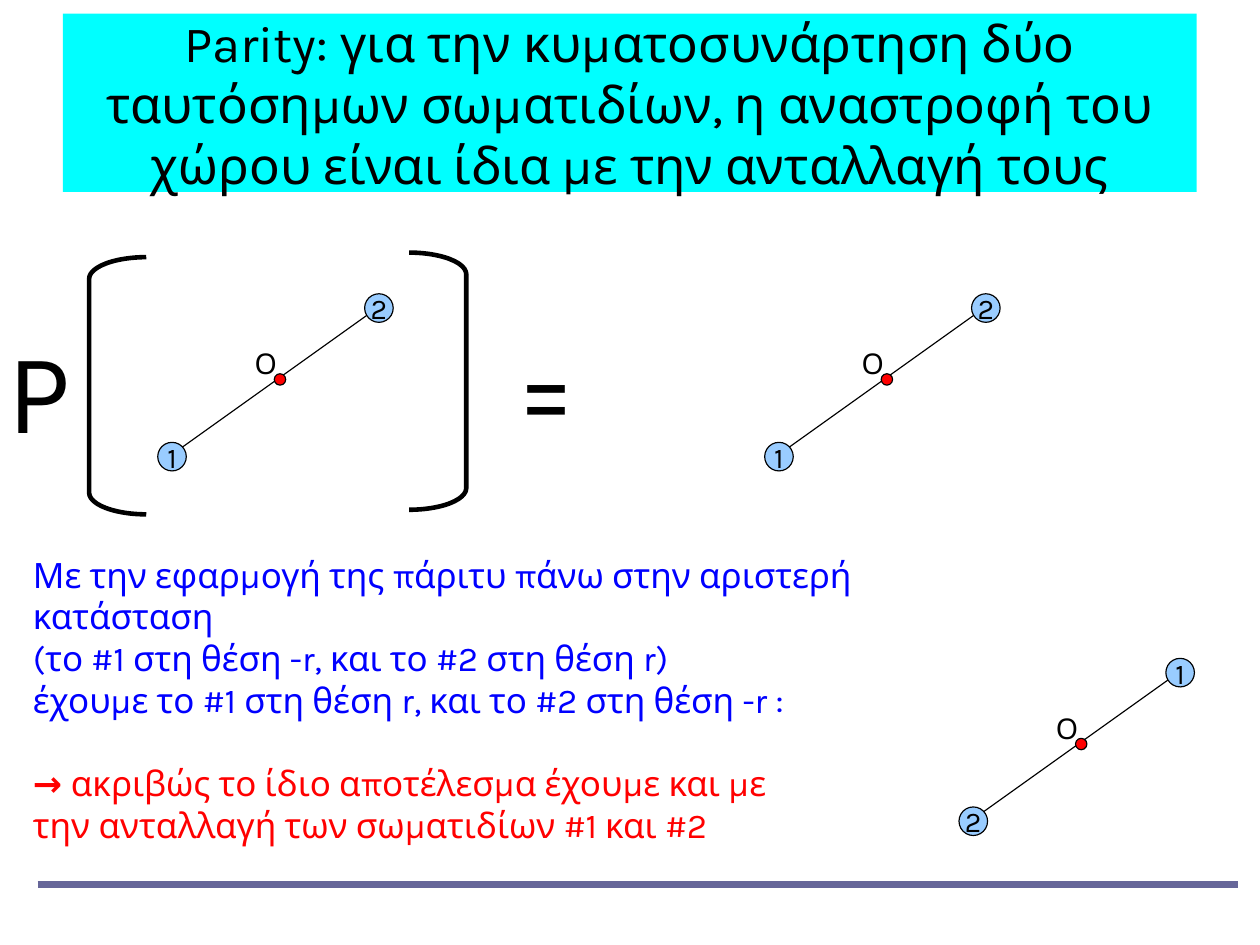
from lxml.etree import SubElement
from pptx import Presentation
from pptx.dml.color import RGBColor
from pptx.enum.shapes import MSO_CONNECTOR as CONN, MSO_SHAPE as SHAPE
from pptx.enum.text import MSO_ANCHOR as ANCHOR, PP_ALIGN as ALIGN
from pptx.oxml.ns import qn
from pptx.util import Inches, Pt

FONT = "Karla"
BLACK, BLUE, RED = "000000", "0000FF", "FF0000"
CM_PER_INCH = 2.54


def color(hex_value):
    return RGBColor.from_string(hex_value)


def add_run(p, text, size, text_color=BLACK, bold=False):
    r = p.add_run()
    r.text = text
    r.font.name = FONT
    r.font.size = Pt(size)
    r.font.bold = bold
    r.font.color.rgb = color(text_color)


def add_line(s, x1, y1, x2, y2, line_color, width):
    line = s.shapes.add_connector(
        CONN.STRAIGHT, Inches(x1), Inches(y1), Inches(x2), Inches(y2))
    line.line.color.rgb = color(line_color)
    line.line.width = Pt(width)
    SubElement(line._element.spPr, qn("a:effectLst"))


def add_figure(s, kind, x, y, w, h, fill=None, line_width=None):
    sp = s.shapes.add_shape(kind, Inches(x), Inches(y), Inches(w), Inches(h))
    sp.shadow.inherit = False
    if fill:
        sp.fill.solid()
        sp.fill.fore_color.rgb = color(fill)
    else:
        sp.fill.background()
    if line_width:
        sp.line.color.rgb = color(BLACK)
        sp.line.width = Pt(line_width)
    else:
        sp.line.fill.background()
    return sp


def add_text_box(s, x, y, w, h):
    tf = s.shapes.add_textbox(
        Inches(x), Inches(y), Inches(w), Inches(h)).text_frame
    tf.word_wrap = True
    return tf


def add_label(s, text, x, y, w, h, size):
    add_run(add_text_box(s, x, y, w, h).paragraphs[0], text, size)


def add_title(s, text):
    sp = add_figure(s, SHAPE.RECTANGLE, 0.55, 0.12, 9.92, 1.56, "00FFFF")
    tf = sp.text_frame
    tf.word_wrap = True
    tf.vertical_anchor = ANCHOR.MIDDLE
    tf.margin_left = tf.margin_right = tf.margin_top = tf.margin_bottom = 0
    p = tf.paragraphs[0]
    p.alignment = ALIGN.CENTER
    add_run(p, text, 32)


def add_particle(s, text, x, y):
    sp = add_figure(s, SHAPE.OVAL, x, y, 0.25, 0.25, "99CCFF", 0.75)
    tf = sp.text_frame
    tf.word_wrap = False
    tf.vertical_anchor = ANCHOR.MIDDLE
    p = tf.paragraphs[0]
    p.alignment = ALIGN.CENTER
    add_run(p, text, 18)


def add_particle_pair(s, x, y, lower, upper):
    add_line(s, x + 0.12, y + 1.41, x + 1.87, y + 0.16, BLACK, 0.75)
    add_particle(s, lower, x, y + 1.3)
    add_particle(s, upper, x + 1.81, y)
    add_figure(s, SHAPE.OVAL, x + 1.02, y + 0.7, 0.1, 0.1, RED, 0.75)
    add_label(s, "Ο", x + 0.75, y + 0.41, 0.39, 0.39, 18)


def add_bracket(s, kind, x, y):
    sp = add_figure(s, kind, x, y, 0.5, 2.25, line_width=2.89)
    sp.adjustments[0] = 0.38


def add_explanation(s):
    tf = add_text_box(s, 0.19, 4.79, 7.75, 2.6)
    statements = [
        "Με την εφαρμογή της πάριτυ πάνω στην αριστερή κατάσταση",
        "(το #1 στη θέση -r, και το #2 στη θέση r)",
        "έχουμε το #1 στη θέση r, και το #2 στη θέση -r :",
    ]
    p = tf.paragraphs[0]
    for text in statements:
        add_run(p, text, 22, BLUE)
        p = tf.add_paragraph()
    p.space_before = Pt(26)
    add_run(p, "→ ", 22, RED, True)
    add_run(p, "ακριβώς το ίδιο αποτέλεσμα έχουμε και με", 22, RED)
    p.add_line_break()
    add_run(p, "την ανταλλαγή των σωματιδίων #1 και #2", 22, RED)


def main():
    prs = Presentation()
    prs.slide_width = Inches(28 / CM_PER_INCH)
    prs.slide_height = Inches(21 / CM_PER_INCH)
    s = prs.slides.add_slide(prs.slide_layouts[6])
    add_line(s, 0.33, 7.74, 10.83, 7.74, "666699", 4.31)
    add_title(s, "Parity: για την κυματοσυνάρτηση δύο ταυτόσημων σωματιδίων, "
                 "η αναστροφή του χώρου είναι ίδια με την ανταλλαγή τους")
    add_particle_pair(s, 1.38, 2.57, "1", "2")
    add_label(s, "P", -0.03, 2.74, 0.8, 1.26, 72)
    add_bracket(s, SHAPE.LEFT_BRACKET, 0.78, 2.25)
    add_bracket(s, SHAPE.RIGHT_BRACKET, 3.58, 2.21)
    add_label(s, "=", 4.42, 2.7, 1.04, 1.26, 72)
    add_explanation(s)
    add_particle_pair(s, 6.69, 2.57, "1", "2")
    add_particle_pair(s, 8.39, 5.76, "2", "1")
    prs.save("out.pptx")


if __name__ == "__main__":
    main()
